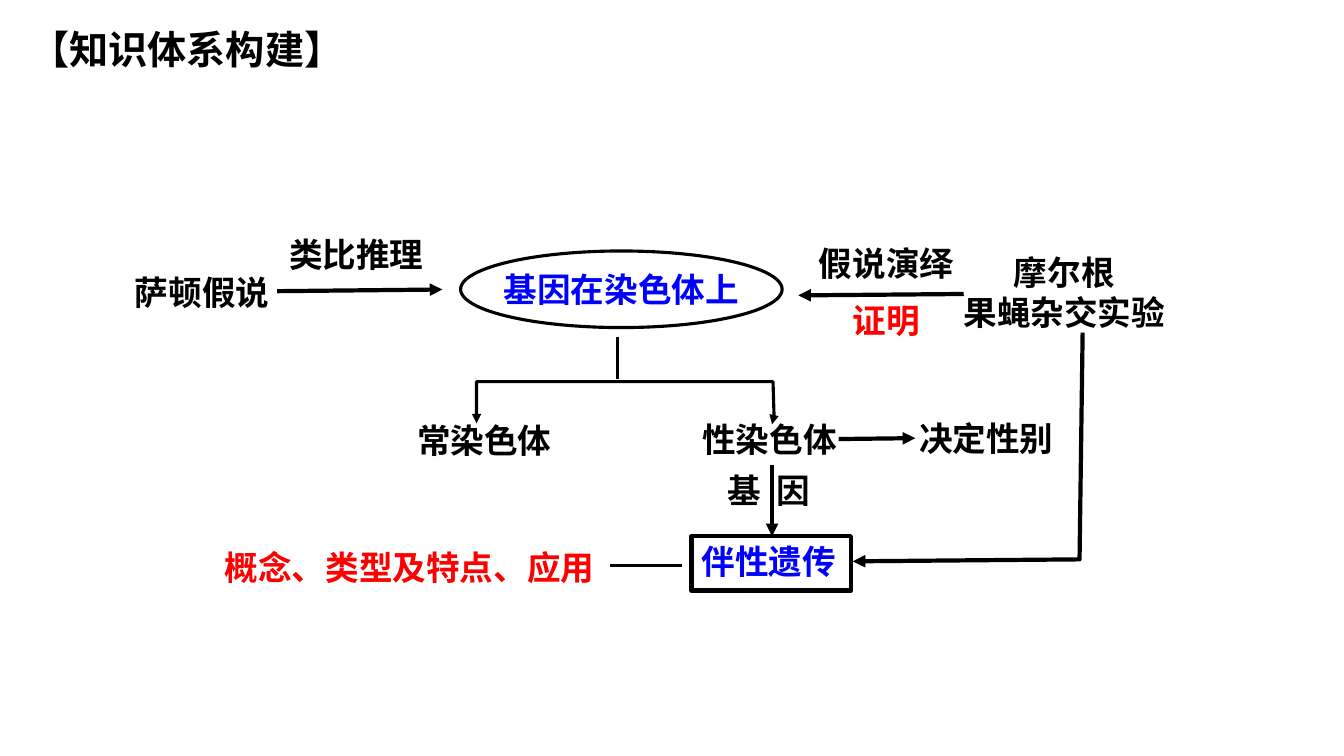
from pptx import Presentation
from pptx.dml.color import RGBColor
from pptx.enum.shapes import MSO_CONNECTOR, MSO_SHAPE as SHAPE
from pptx.enum.text import MSO_ANCHOR as ANCHOR, MSO_AUTO_SIZE as AUTO, PP_ALIGN as ALIGN
from pptx.oxml.ns import qn
from pptx.util import Pt
from lxml.etree import SubElement

FONT = "Noto Sans CJK SC"
BLACK, BLUE, RED = "000000", "0000FF", "FF0000"
THIN, THICK = 2.25, 3
GENE_TAB = 35  # gap that lets the arrow pass between the two characters


def colour(value):
    return RGBColor.from_string(value)


def apply_format(target, values):
    for name, value in values.items():
        setattr(target, name, value)


def place(element, left, top, width, height):
    values = (left, top, width, height)
    apply_format(element, dict(zip(("left", "top", "width", "height"), map(Pt, values))))


def write(element, lines, size=24, align=ALIGN.LEFT, gap=0, wrap=True,
          anchor=ANCHOR.TOP, fit=AUTO.SHAPE_TO_FIT_TEXT, tab=None):
    """Fill the element with (text, colour) lines, one paragraph each."""
    frame = element.text_frame
    apply_format(frame, {"word_wrap": wrap, "vertical_anchor": anchor, "auto_size": fit,
                         "margin_left": Pt(7.2), "margin_right": Pt(7.2),
                         "margin_top": Pt(3.6), "margin_bottom": Pt(3.6)})
    for index, (text, ink) in enumerate(lines):
        paragraph = frame.add_paragraph() if index else frame.paragraphs[0]
        apply_format(paragraph, {"alignment": align, "line_spacing": 1.0,
                                 "space_before": Pt(gap if index else 0)})
        if tab:
            stops = SubElement(paragraph._p.get_or_add_pPr(), qn("a:tabLst"))
            SubElement(stops, qn("a:tab"), pos=str(Pt(tab)), algn="l")
        run = paragraph.add_run()
        run.text = text
        apply_format(run.font, {"name": FONT, "size": Pt(size), "bold": True})
        run.font.color.rgb = colour(ink)
        SubElement(run._r.get_or_add_rPr(), qn("a:ea"), typeface=FONT)


def add_label(slide, box, *lines, **options):
    label = slide.shapes.add_textbox(0, 0, 0, 0)
    place(label, *box)
    write(label, lines, **options)


def style_line(element, weight, head=False, tail=False):
    element.line.color.rgb = colour(BLACK)
    element.line.width = Pt(weight)
    for end, wanted in (("a:headEnd", head), ("a:tailEnd", tail)):
        if wanted:
            SubElement(element.line._get_or_add_ln(), qn(end), type="triangle")


def add_node(slide, kind, box, text, weight, **options):
    node = slide.shapes.add_shape(kind, *map(Pt, box))
    node.shadow.inherit = False
    node.fill.background()
    style_line(node, weight)
    write(node, [(text, BLUE)], **options)


def add_link(slide, start, end, weight=THICK, tail=True):
    link = slide.shapes.add_connector(MSO_CONNECTOR.STRAIGHT, *map(Pt, start + end))
    style_line(link, weight, tail=tail)
    SubElement(link._element.spPr, qn("a:effectLst"))


def add_bent_link(slide, points, weight, head=False):
    start, *rest = [(Pt(x), Pt(y)) for x, y in points]
    builder = slide.shapes.build_freeform(*start)
    builder.add_line_segments(rest, close=False)
    link = builder.convert_to_shape()
    link.shadow.inherit = False
    link.fill.background()
    style_line(link, weight, head=head, tail=True)


def main():
    deck = Presentation()
    deck.slide_width, deck.slide_height = Pt(960), Pt(540)
    slide = deck.slides.add_slide(deck.slide_layouts[5])

    # Title
    title = slide.shapes.title
    place(title, 14.4, 14.4, 238.4, 41)
    write(title, [("【知识体系构建】", BLACK)], size=28, wrap=False)

    # Central idea and its outcome
    add_node(slide, SHAPE.OVAL, (329, 179.3, 229.7, 54.7), "基因在染色体上", THIN,
             align=ALIGN.CENTER, wrap=False, anchor=ANCHOR.MIDDLE, fit=AUTO.NONE)
    add_node(slide, SHAPE.RECTANGLE, (494, 383, 113.8, 38.9), "伴性遗传", THICK)

    # Hypothesis and evidence
    add_label(slide, (89.3, 190.8, 144, 36), ("萨顿假说", BLACK))
    add_label(slide, (199.4, 163.4, 144, 36), ("类比推理", BLACK))
    add_label(slide, (663.1, 176.4, 194.4, 64.8), ("摩尔根", BLACK),
              ("果蝇杂交实验", BLACK), align=ALIGN.CENTER)
    add_label(slide, (560.9, 169.9, 144, 79.2), ("假说演绎", BLACK), ("证明", RED),
              align=ALIGN.CENTER, gap=12)
    add_link(slide, (198, 208), (316, 206.8))
    add_link(slide, (688.4, 210), (570.2, 211))

    # Chromosome types
    add_label(slide, (290.9, 296.6, 144, 36), ("常染色体", BLACK))
    add_label(slide, (494.6, 295.6, 154.8, 36), ("性染色体", BLACK))
    add_label(slide, (649.4, 294.8, 144, 36), ("决定性别", BLACK))
    add_link(slide, (441.2, 240.5), (441.2, 270.7), THIN, tail=False)
    add_bent_link(slide, [(340.4, 302.4), (340.4, 272.6), (552.2, 272.6),
                          (553, 299.5), (551.5, 303.1)], THIN, head=True)
    add_link(slide, (599, 313.6), (653.8, 313))

    # Sex-linked inheritance
    add_label(slide, (512.6, 331.9, 144, 36), ("基\t因", BLACK), tab=GENE_TAB)
    add_label(slide, (153.4, 387.4, 292.3, 36), ("概念、类型及特点、应用", RED))
    add_link(slide, (551.5, 331.9), (551.5, 383))
    add_link(slide, (435.6, 403.9), (487.4, 403.9), THIN, tail=False)
    add_bent_link(slide, [(773.3, 237.6), (771.1, 399.6), (609.1, 401)], THICK)

    deck.save("out.pptx")


if __name__ == "__main__":
    main()
